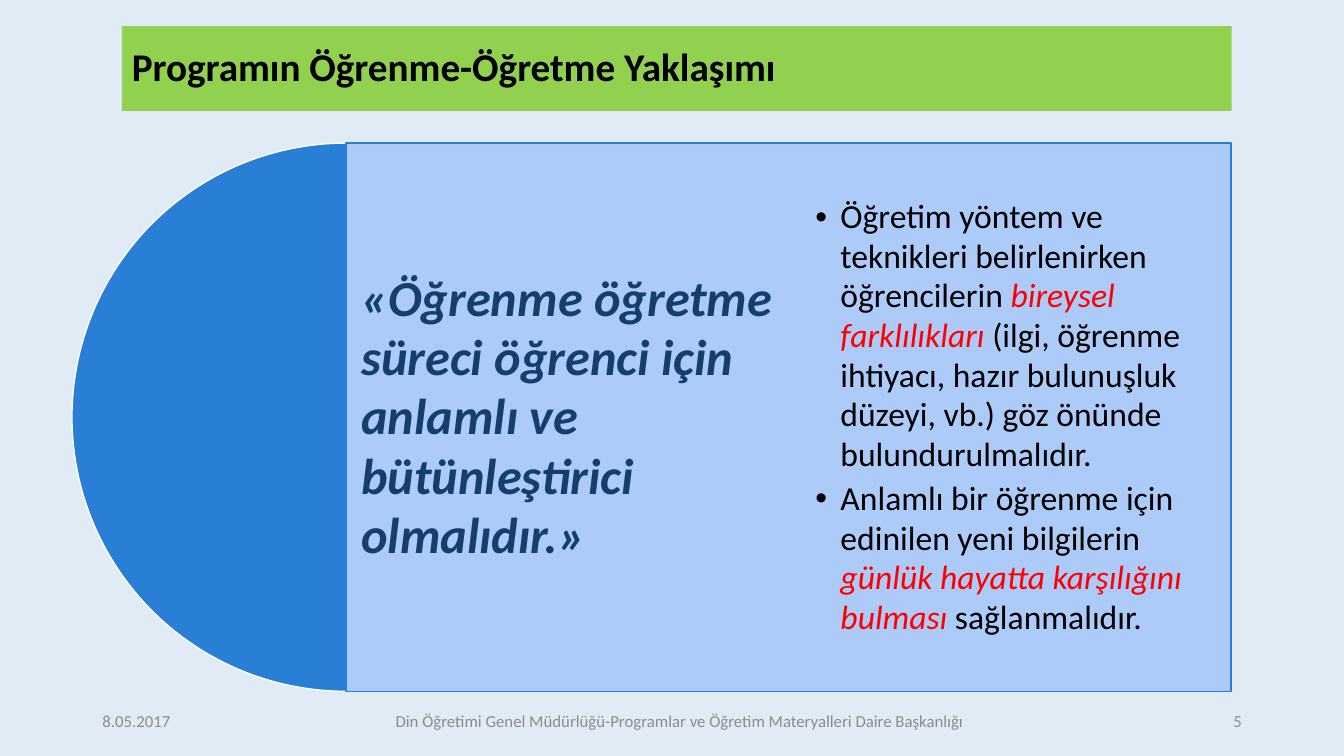
from lxml import etree
from pptx import Presentation
from pptx import util as u
from pptx.dml.color import RGBColor
from pptx.enum import shapes, text
from pptx.oxml.ns import qn

COLORS = {
    "page": "E0EBF6", "title": "92D050", "blue": "297FD5", "panel": "ACCBF9",
    "white": "FFFFFF", "black": "000000", "quote": "143F6A", "red": "FF0000",
    "footer": "8C8C8C",
}
ALIGN = text.PP_ALIGN


class SlideBuilder:
    def __init__(self, deck, font):
        self.font = font
        self.page = deck.slides.add_slide(deck.slide_layouts[5])
        self.fill(self.page.background, "page")

    def fill(self, target, color):
        target.fill.solid()
        target.fill.fore_color.rgb = RGBColor.from_string(COLORS[color])

    def style(self, span, size, color, bold=False, italic=False):
        font = span.font
        font.name, font.size, font.bold, font.italic = self.font, u.Pt(size), bold, italic
        font.color.rgb = RGBColor.from_string(COLORS[color])

    def title(self, wording, left, top, width, height):
        box = self.page.shapes.title
        box.left, box.top, box.width, box.height = map(u.Pt, (left, top, width, height))
        self.fill(box, "title")
        frame = box.text_frame
        frame.text = wording
        frame.vertical_anchor = text.MSO_ANCHOR.MIDDLE
        frame.auto_size = text.MSO_AUTO_SIZE.NONE
        para = frame.paragraphs[0]
        para.alignment, para.line_spacing = ALIGN.LEFT, 0.9
        self.style(para.runs[0], 28, "black", bold=True)

    def shape(self, kind, left, top, width, height, fill, line):
        box = self.page.shapes.add_shape(kind, *map(u.Pt, (left, top, width, height)))
        box.shadow.inherit = False
        self.fill(box, fill)
        box.line.color.rgb = RGBColor.from_string(COLORS[line])
        box.line.width = u.Pt(1)
        return box

    def text_box(self, left, top, width, height, inset=None):
        box = self.page.shapes.add_textbox(*map(u.Pt, (left, top, width, height)))
        frame = box.text_frame
        frame.word_wrap = True
        frame.vertical_anchor = text.MSO_ANCHOR.MIDDLE
        if inset is not None:
            frame.margin_left = frame.margin_right = u.Pt(inset)
            frame.margin_top = frame.margin_bottom = u.Pt(inset)
        return frame

    def label(self, wording, left, top, width, height, size, color,
              align=ALIGN.LEFT, inset=None, spacing=1.0, **emphasis):
        para = self.text_box(left, top, width, height, inset).paragraphs[0]
        para.text = wording
        para.alignment, para.line_spacing = align, spacing
        self.style(para.runs[0], size, color, **emphasis)
        return para

    def bullets(self, items, left, top, width, height, inset, size, spacing):
        frame = self.text_box(left, top, width, height, inset)
        for index, parts in enumerate(items):
            para = frame.add_paragraph() if index else frame.paragraphs[0]
            para.line_spacing, para.space_after = spacing, u.Pt(0.15 * size)
            props = para._p.get_or_add_pPr()
            props.set("marL", str(u.Pt(18)))
            props.set("indent", str(-u.Pt(18)))
            etree.SubElement(props, qn("a:buFont")).set("typeface", "Arial")
            etree.SubElement(props, qn("a:buChar")).set("char", "•")
            for wording, stressed in parts:
                span = para.add_run()
                span.text = wording
                self.style(span, size, "red" if stressed else "black", italic=stressed)


def main():
    deck = Presentation()
    deck.slide_width, deck.slide_height = u.Pt(960), u.Pt(540)
    slide = SlideBuilder(deck, "Calibri")

    # Title band
    slide.title("Programın Öğrenme-Öğretme Yaklaşımı", 87, 18.7, 792.7, 60.5)

    # Half disc and panel: the panel starts at the centre of the disc
    disc_left, top, size = 51.4, 102.2, 391.6
    panel_left, column = disc_left + size / 2, 316
    disc = slide.shape(shapes.MSO_SHAPE.PIE, disc_left, top, size, size, "blue", "white")
    disc.adjustments[0], disc.adjustments[1] = 54, 162
    slide.shape(shapes.MSO_SHAPE.RECTANGLE, panel_left, top, 2 * column, size, "panel", "blue")

    # Quotation in the left column
    quote = slide.label(
        "«Öğrenme öğretme süreci öğrenci için anlamlı ve bütünleştirici olmalıdır.»",
        panel_left, top, column, size, 36, "quote",
        inset=10.8, spacing=0.98, bold=True, italic=True)
    quote.space_after = u.Pt(12)

    # Bullets in the right column
    slide.bullets([
        [("Öğretim yöntem ve teknikleri belirlenirken öğrencilerin ", False),
         ("bireysel farklılıkları ", True),
         ("(ilgi, öğrenme ihtiyacı, hazır bulunuşluk düzeyi, vb.) "
          "göz önünde bulundurulmalıdır.", False)],
        [("Anlamlı bir öğrenme için edinilen yeni bilgilerin ", False),
         ("günlük hayatta karşılığını bulması ", True),
         ("sağlanmalıdır.", False)],
    ], panel_left + column, top, column, size, inset=19.2, size=24, spacing=0.98)

    # Footer row
    for wording, left, width, align in [
        ("8.05.2017", 66, 90, ALIGN.LEFT),
        ("Din Öğretimi Genel Müdürlüğü-Programlar ve Öğretim Materyalleri Daire Başkanlığı",
         180, 611, ALIGN.CENTER),
        ("5", 810.7, 83.5, ALIGN.RIGHT),
    ]:
        slide.label(wording, left, 500.5, width, 28.75, 12, "footer", align)

    deck.save("out.pptx")


if __name__ == "__main__":
    main()
